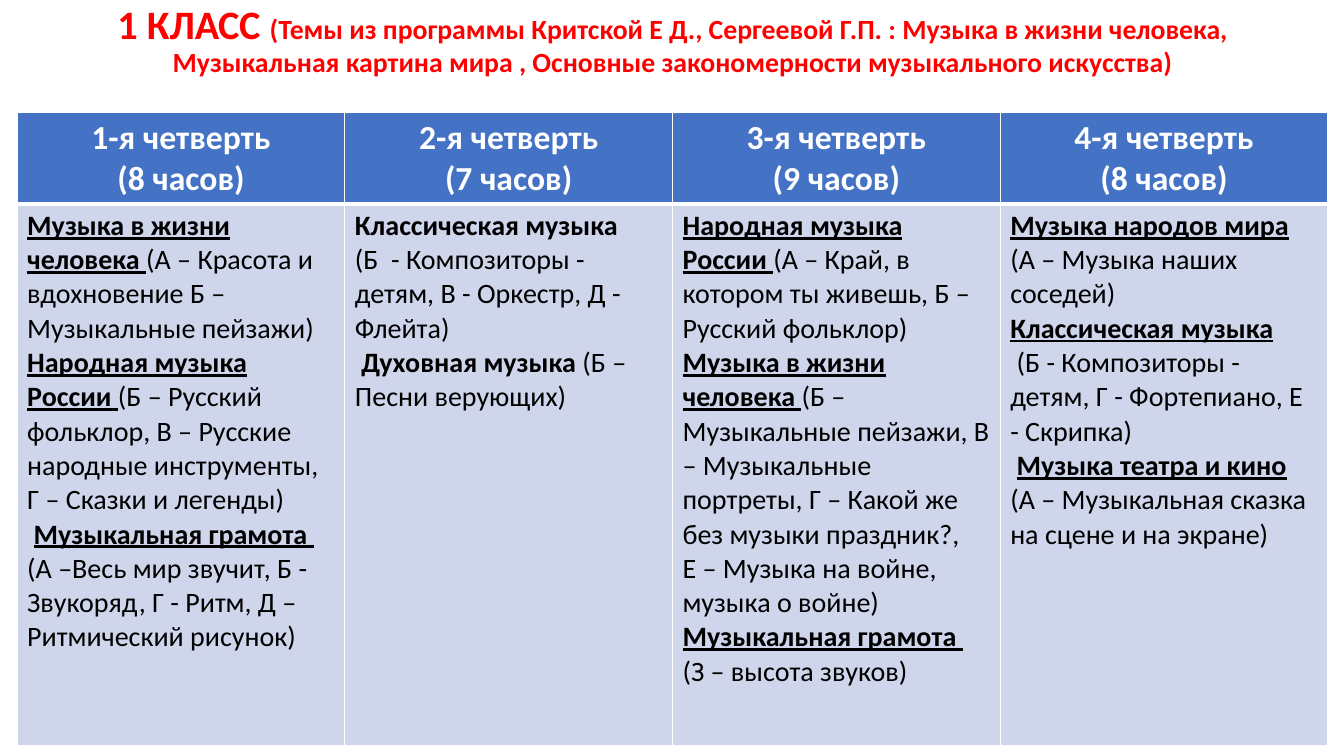
from lxml.etree import SubElement
from pptx import Presentation
from pptx.dml.color import RGBColor
from pptx.enum.text import MSO_ANCHOR, PP_ALIGN
from pptx.oxml.ns import qn
from pptx.util import Inches, Pt

COLORS = {"title": "FF0000", "header": "4472C4", "body": "CFD5EA",
          "white": "FFFFFF", "black": "000000"}
TITLE = [("1 КЛАСС ", 28.8),
         ("(Темы из программы Критской Е Д., Сергеевой Г.П. : Музыка в жизни человека, "
          "Музыкальная картина мира , Основные закономерности музыкального искусства)", 19.8)]
HOURS = [8, 7, 9, 8]
TOPICS = [
    ["*Музыка в жизни человека *(А – Красота и вдохновение Б – Музыкальные пейзажи)",
     "*Народная музыка России *(Б – Русский фольклор, В – Русские народные инструменты, "
     "Г – Сказки и легенды)",
     " *Музыкальная грамота *",
     "(А –Весь мир звучит, Б - Звукоряд, Г - Ритм, Д – Ритмический рисунок)"],
    ["*Классическая музыка*",
     "(Б  - Композиторы - детям, В - Оркестр, Д - Флейта)",
     " *Духовная музыка *(Б – Песни верующих)"],
    ["*Народная музыка России *(А – Край, в котором ты живешь, Б – Русский фольклор)",
     "*Музыка в жизни человека *(Б – Музыкальные пейзажи, В – Музыкальные портреты, "
     "Г – Какой же без музыки праздник?,",
     "Е – Музыка на войне, музыка о войне)",
     "*Музыкальная грамота *",
     "(З – высота звуков)"],
    ["*Музыка народов мира *(А – Музыка наших соседей)",
     "*Классическая музыка*",
     " (Б - Композиторы - детям, Г - Фортепиано, Е - Скрипка)",
     " *Музыка театра и кино *(А – Музыкальная сказка на сцене и на экране)"],
]
PLAIN_QUARTER = 1


def add_span(paragraph, text, size, color, bold=False, underline=False):
    span = paragraph.add_run()
    span.text = text
    font = span.font
    font.name, font.size = "Calibri", Pt(size)
    font.bold, font.underline = bold, underline
    font.color.rgb = RGBColor.from_string(COLORS[color])


class Page:
    """Holds the current slide and draws its styled elements."""

    def __init__(self, deck):
        self.slide = deck.slides.add_slide(deck.slide_layouts[6])

    def title(self, spans, left, top, width, height):
        box = self.slide.shapes.add_textbox(Inches(left), Inches(top),
                                            Inches(width), Inches(height))
        frame = box.text_frame
        frame.word_wrap = True
        frame.vertical_anchor = MSO_ANCHOR.MIDDLE
        paragraph = frame.paragraphs[0]
        paragraph.alignment = PP_ALIGN.CENTER
        paragraph.line_spacing = 0.9
        for text, size in spans:
            add_span(paragraph, text, size, "title", bold=True)

    def table(self, left, top, column_width, row_heights, columns):
        frame = self.slide.shapes.add_table(
            len(row_heights), columns, Inches(left), Inches(top),
            Inches(column_width * columns), Inches(sum(row_heights)))
        table = frame.table
        table.horz_banding = False
        for column in table.columns:
            column.width = Inches(column_width)
        for row, height in zip(table.rows, row_heights):
            row.height = Inches(height)
        return table

    def cell(self, cell, fill, borders):
        properties = cell._tc.get_or_add_tcPr()
        for side, width in borders.items():
            line = SubElement(properties, qn(f"a:ln{side}"), w=str(Pt(width)))
            solid = SubElement(line, qn("a:solidFill"))
            SubElement(solid, qn("a:srgbClr"), val=COLORS["white"])
        cell.fill.solid()
        cell.fill.fore_color.rgb = RGBColor.from_string(COLORS[fill])

    def header(self, cell, lines):
        self.cell(cell, "header", {"L": 1, "R": 1, "T": 1, "B": 3})
        for paragraph, text in self.paragraphs(cell, lines):
            paragraph.alignment = PP_ALIGN.CENTER
            add_span(paragraph, text, 24, "white", bold=True)

    def topics(self, cell, lines, underline):
        self.cell(cell, "body", {"L": 1, "R": 1, "T": 3, "B": 1})
        for paragraph, line in self.paragraphs(cell, lines):
            for index, text in enumerate(line.split("*")):
                heading = index % 2 == 1
                if text:
                    add_span(paragraph, text, 20, "black", heading, heading and underline)

    def paragraphs(self, cell, lines):
        frame = cell.text_frame
        for index, line in enumerate(lines):
            yield (frame.add_paragraph() if index else frame.paragraphs[0]), line


def main():
    deck = Presentation()
    deck.slide_width, deck.slide_height = Inches(13.33), Inches(7.5)
    page = Page(deck)
    page.title(TITLE, 0.92, 0, 11.5, 0.83)
    table = page.table(0.17, 1.12, 3.25, [0.9, 5.38], len(HOURS))
    for quarter, (hours, lines) in enumerate(zip(HOURS, TOPICS)):
        page.header(table.cell(0, quarter),
                    [f"{quarter + 1}-я четверть", f"({hours} часов)"])
        page.topics(table.cell(1, quarter), lines, quarter != PLAIN_QUARTER)
    deck.save("out.pptx")


if __name__ == "__main__":
    main()
